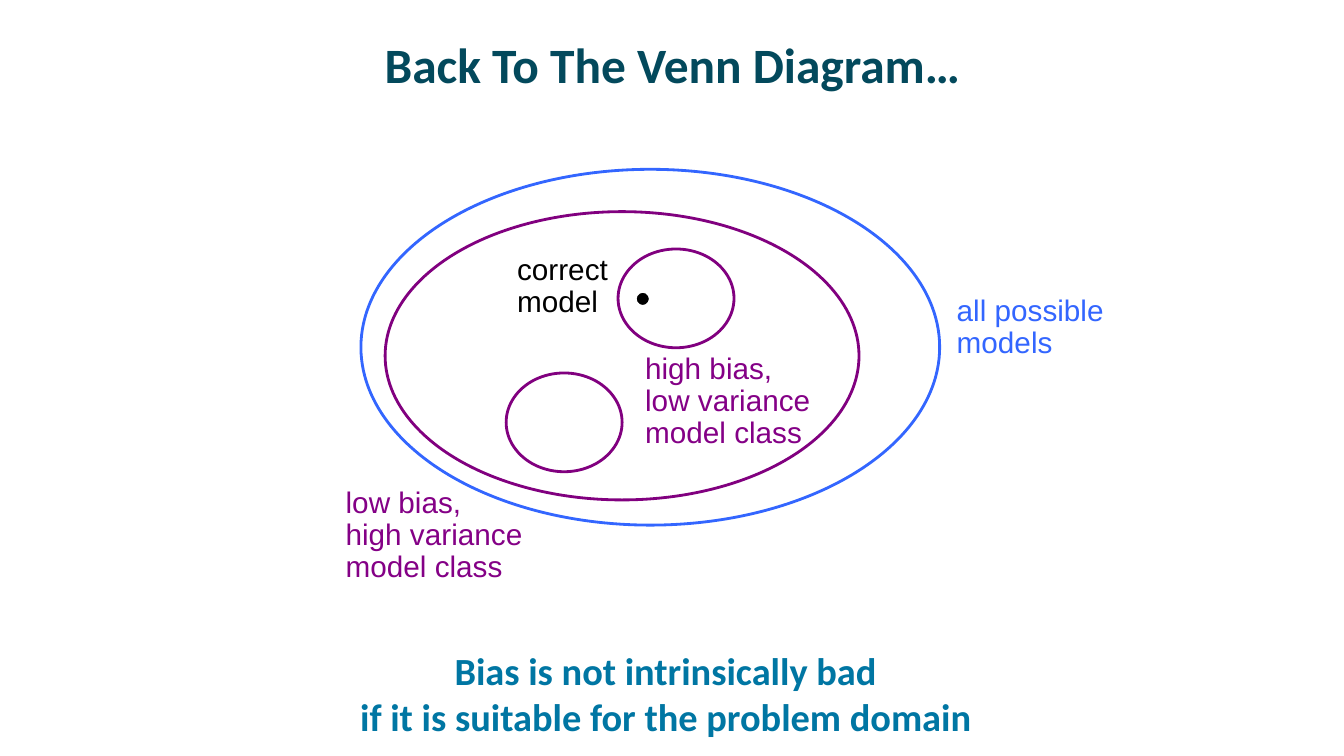
from dataclasses import dataclass

from lxml import etree
from pptx import Presentation
from pptx.dml.color import RGBColor
from pptx.enum import shapes, text
from pptx.oxml.ns import qn
from pptx.util import Inches, Pt


@dataclass(frozen=True)
class Theme:
    heading_font: str = "Calibri"
    label_font: str = "Arial"
    title_size: float = 35.3
    body_size: float = 27.4
    label_size: float = 21.2
    line_width: float = 2
    title: str = "03495C"
    takeaway: str = "0076A3"
    all_models: str = "3366FF"
    class_label: str = "840086"
    class_line: str = "81007F"
    black: str = "000000"
    white: str = "FFFFFF"


class VennSlide:
    def __init__(self, deck, theme):
        self.theme = theme
        self.page = deck.slides.add_slide(deck.slide_layouts[1])

    def format_text(self, frame, font, size, color, bold=False):
        for para in frame.paragraphs:
            for span in para.runs:
                span.font.name = font
                span.font.size = Pt(size)
                span.font.bold = bold
                span.font.color.rgb = RGBColor.from_string(color)

    def heading(self, box, words, place, size, color, anchor):
        """Move, fill and format a placeholder as centred bold text."""
        box.left, box.top, box.width, box.height = map(Inches, place)
        frame = box.text_frame
        frame.text = words
        frame.auto_size = text.MSO_AUTO_SIZE.NONE
        frame.vertical_anchor = anchor
        frame.margin_left = frame.margin_right = Inches(0.11)
        frame.margin_top = frame.margin_bottom = Inches(0.06)
        para = frame.paragraphs[0]
        para.alignment = text.PP_ALIGN.CENTER
        para.space_before = Pt(0)
        self.format_text(frame, self.theme.heading_font, size, color, bold=True)
        return para

    def title(self, words, place):
        self.heading(self.page.shapes.title, words, place, self.theme.title_size,
                     self.theme.title, text.MSO_ANCHOR.MIDDLE)

    def takeaway(self, words, place):
        para = self.heading(self.page.placeholders[1], words, place,
                            self.theme.body_size, self.theme.takeaway,
                            text.MSO_ANCHOR.TOP)
        properties = para._p.get_or_add_pPr()
        properties.set("marL", str(Inches(0.1)))
        properties.set("indent", "0")
        etree.SubElement(properties, qn("a:buNone"))

    def oval(self, place, line, fill=None):
        shape = self.page.shapes.add_shape(shapes.MSO_SHAPE.OVAL, *map(Inches, place))
        shape.shadow.inherit = False
        shape.line.color.rgb = RGBColor.from_string(line)
        shape.line.width = Pt(self.theme.line_width)
        if fill:
            shape.fill.solid()
            shape.fill.fore_color.rgb = RGBColor.from_string(fill)
        else:
            shape.fill.background()
        return shape

    def label(self, words, place, color):
        box = self.page.shapes.add_textbox(*map(Inches, place))
        frame = box.text_frame
        frame.text = words
        frame.word_wrap = False
        frame.auto_size = text.MSO_AUTO_SIZE.SHAPE_TO_FIT_TEXT
        for para in frame.paragraphs:
            para.line_spacing = 0.9
        self.format_text(frame, self.theme.label_font, self.theme.label_size, color)
        return box

    def group(self, *members):
        self.page.shapes.add_group_shape(members)


def main():
    deck = Presentation()
    deck.slide_width, deck.slide_height = Inches(13.33), Inches(7.5)
    theme = Theme()
    venn = VennSlide(deck, theme)

    venn.title("Back To The Venn Diagram…", (0.67, 0.17, 12, 0.92))
    venn.takeaway("Bias is not intrinsically bad\vif it is suitable for the problem domain",
                  (0.44, 6.36, 12.22, 0.97))

    venn.oval((3.58, 1.68, 5.74, 3.53), theme.all_models, theme.white)
    venn.label("all possible\nmodels", (9.39, 2.89, 1.71, 0.74), theme.all_models)

    venn.group(
        venn.label("low bias,\nhigh variance\nmodel class",
                   (3.33, 4.79, 1.97, 1.06), theme.class_label),
        venn.oval((3.82, 2.1, 4.7, 2.86), theme.class_line),
    )

    venn.oval((6.3, 2.89, 0.15, 0.15), theme.white, theme.black)
    venn.label("correct\nmodel", (5.03, 2.48, 1.11, 0.74), theme.black)

    for left, top in ((6.13, 2.47), (5.02, 3.7)):
        venn.oval((left, top, 1.15, 0.98), theme.class_line)
    venn.label("high bias,\nlow variance\nmodel class",
               (6.3, 3.46, 1.85, 1.06), theme.class_label)

    deck.save("out.pptx")


if __name__ == "__main__":
    main()
